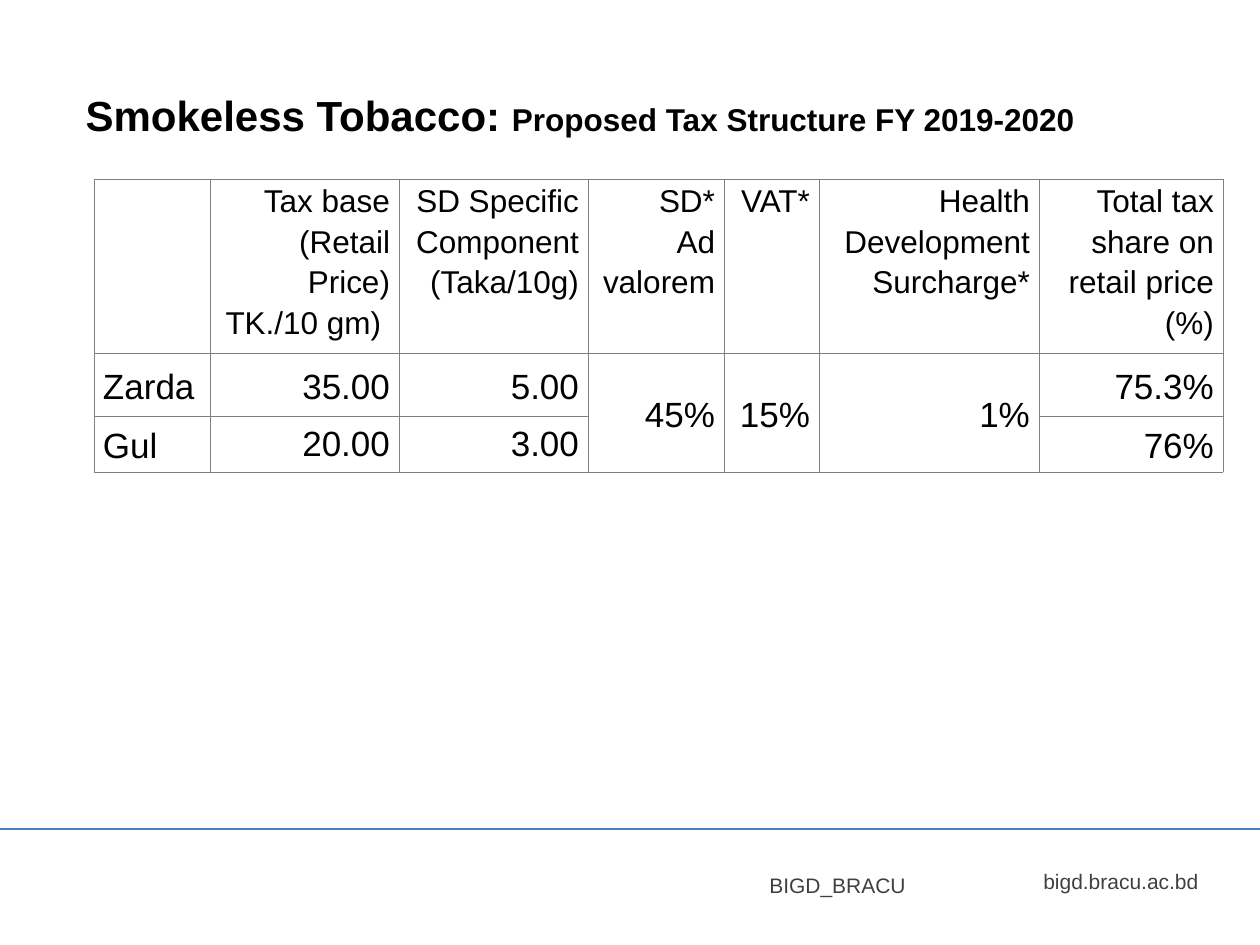
from dataclasses import dataclass

from lxml import etree
from pptx import Presentation
from pptx import util as u
from pptx.dml.color import RGBColor
from pptx.enum import shapes, text
from pptx.oxml import ns

TITLE = [("Smokeless Tobacco: ", 24), ("Proposed Tax Structure FY 2019-2020", 18)]
HEADERS = [
    [],
    ["Tax base", "(Retail Price) TK./10 gm) "],
    ["SD Specific Component", "(Taka/10g)"],
    ["SD*", "Ad valorem"],
    ["VAT*"],
    ["Health Development Surcharge*"],
    ["Total tax share on retail price (%)"],
]
PRODUCTS = [
    ["Zarda", "35.00", "5.00", "45%", "15%", "1%", "75.3%"],
    ["Gul", "20.00", "3.00", None, None, None, "76%"],
]
SINGLE_SPACED = {"20.00", "3.00"}
COLUMN_WIDTHS = [116, 189, 189, 136, 95, 220, 184]
ROW_HEIGHTS = [156, 63, 56]
FOOTERS = [
    ("bigd.bracu.ac.bd", (1029, 862, 182, 38), text.PP_ALIGN.RIGHT),
    ("BIGD_BRACU", (757, 866, 163, 38), text.PP_ALIGN.LEFT),
]


@dataclass
class Theme:
    font: str = "Arial"
    ink: str = "000000"
    footer_ink: str = "404040"
    rule: str = "4B7EBC"
    border: str = "808080"
    header_size: int = 18
    body_size: int = 20
    footer_size: int = 12


theme = Theme()
PX = u.Inches(1) / 126


def px(*lengths):
    return [round(length * PX) for length in lengths]


def write(frame, paragraphs, color=theme.ink, bold=False,
          align=text.PP_ALIGN.LEFT, spacing=1.15):
    for index, runs in enumerate(paragraphs):
        paragraph = frame.add_paragraph() if index else frame.paragraphs[0]
        paragraph.alignment = align
        paragraph.line_spacing = spacing
        for words, size in runs:
            run = paragraph.add_run()
            run.text = words
            run.font.name = theme.font
            run.font.size = u.Pt(size)
            run.font.bold = bold
            run.font.color.rgb = RGBColor.from_string(color)


def format_cell(cell):
    cell.margin_left = cell.margin_right = px(9)[0]
    cell.margin_top = cell.margin_bottom = 0
    properties = cell._tc.get_or_add_tcPr()
    for side in ("a:lnL", "a:lnR", "a:lnT", "a:lnB"):
        edge = etree.SubElement(properties, ns.qn(side), w=str(u.Pt(0.25)))
        fill = etree.SubElement(edge, ns.qn("a:solidFill"))
        etree.SubElement(fill, ns.qn("a:srgbClr"), val=theme.border)
    cell.fill.background()


def add_title(slide):
    title = slide.shapes.title
    title.left, title.top, title.width, title.height = px(73, 76, 1023, 72)
    frame = title.text_frame
    frame.word_wrap = False
    frame.auto_size = text.MSO_AUTO_SIZE.NONE
    frame.vertical_anchor = text.MSO_ANCHOR.TOP
    write(frame, [TITLE], bold=True)


def add_tax_table(slide):
    size = (sum(COLUMN_WIDTHS), sum(ROW_HEIGHTS))
    table = slide.shapes.add_table(
        len(ROW_HEIGHTS), len(COLUMN_WIDTHS), *px(94, 179, *size)).table
    table.first_row = table.horz_banding = False
    for column, width in zip(table.columns, px(*COLUMN_WIDTHS)):
        column.width = width
    for row, height in zip(table.rows, px(*ROW_HEIGHTS)):
        row.height = height
    for cell in table.iter_cells():
        format_cell(cell)

    for column, lines in enumerate(HEADERS):
        write(table.cell(0, column).text_frame,
              [[(line, theme.header_size)] for line in lines],
              align=text.PP_ALIGN.RIGHT)
    for row, values in enumerate(PRODUCTS, 1):
        for column, value in enumerate(values):
            cell = table.cell(row, column)
            if value is None:
                table.cell(row - 1, column).merge(cell)
                continue
            cell.vertical_anchor = text.MSO_ANCHOR.MIDDLE
            write(cell.text_frame, [[(value, theme.body_size)]],
                  align=text.PP_ALIGN.RIGHT if column else text.PP_ALIGN.LEFT,
                  spacing=1.0 if value in SINGLE_SPACED else 1.15)


def add_footer(slide):
    rule = slide.shapes.add_connector(
        shapes.MSO_CONNECTOR.STRAIGHT, *px(0, 829, 1260, 829))
    rule.line.color.rgb = RGBColor.from_string(theme.rule)
    rule.line.width = u.Pt(0.75)
    etree.SubElement(rule._element.spPr, ns.qn("a:effectLst"))
    for words, box, align in FOOTERS:
        frame = slide.shapes.add_textbox(*px(*box)).text_frame
        frame.word_wrap = False
        write(frame, [[(words, theme.footer_size)]], color=theme.footer_ink,
              align=align, spacing=1.0)


def main():
    deck = Presentation()
    deck.slide_width, deck.slide_height = px(1260, 945)
    slide = deck.slides.add_slide(deck.slide_layouts.get_by_name("Title Only"))
    add_footer(slide)
    add_tax_table(slide)
    add_title(slide)
    deck.save("out.pptx")


if __name__ == "__main__":
    main()
